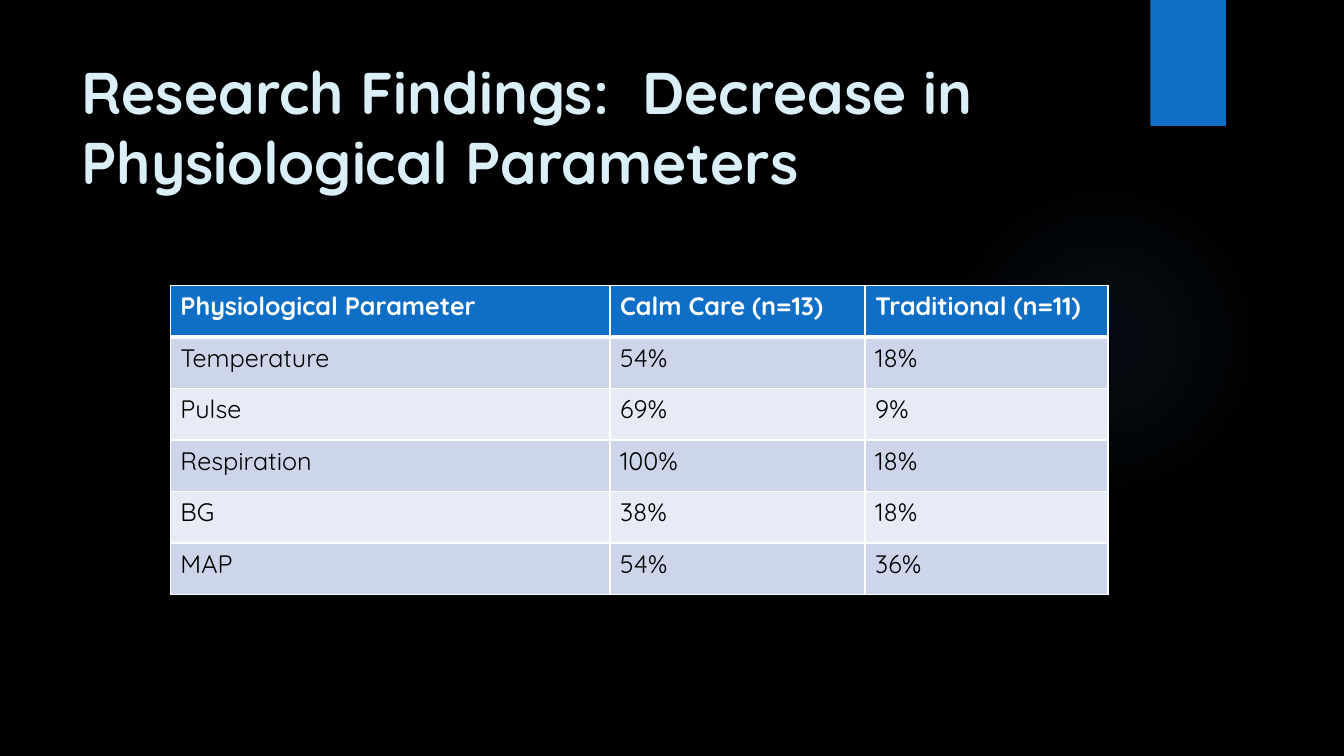
from lxml import etree
from pptx import Presentation
from pptx.dml.color import RGBColor
from pptx.enum.shapes import MSO_SHAPE as Shape
from pptx.enum.text import MSO_ANCHOR as Anchor
from pptx.oxml import parse_xml
from pptx.oxml.ns import nsdecls, qn
from pptx.util import Inches, Pt

FONT = "Quicksand"
BLACK = RGBColor(0x00, 0x00, 0x00)
WHITE = RGBColor(0xFF, 0xFF, 0xFF)
BLUE = RGBColor(0x0F, 0x6F, 0xC6)
GLOW = RGBColor(0x44, 0x8A, 0xD7)
PALE_BLUE = RGBColor(0xDB, 0xEF, 0xF9)
BANDS = (RGBColor(0xCC, 0xD5, 0xEA), RGBColor(0xE7, 0xEB, 0xF5))

GLOW_STOPS = ((0, 7), (36, 6), (69, 0), (100, 0))
COLUMN_WIDTHS = (4.36, 2.53, 2.41)
FINDINGS = (
    ("Physiological Parameter", "Calm Care (n=13)", "Traditional (n=11)"),
    ("Temperature", "54%", "18%"),
    ("Pulse", "69%", "9%"),
    ("Respiration", "100%", "18%"),
    ("BG", "38%", "18%"),
    ("MAP", "54%", "36%"),
)


def format_text(paragraph, size, color, bold):
    """Format every run of a paragraph."""
    for run in paragraph.runs:
        run.font.name = FONT
        run.font.size = Pt(size)
        run.font.bold = bold
        run.font.color.rgb = color


def add_plain_shape(slide, kind, left, top, width, height):
    """Add a blue shape without outline or shadow."""
    shape = slide.shapes.add_shape(
        kind, Inches(left), Inches(top), Inches(width), Inches(height))
    shape.shadow.inherit = False
    shape.fill.solid()
    shape.fill.fore_color.rgb = BLUE
    shape.line.fill.background()
    return shape


def add_glow(slide, left, top, size):
    """Add a round glow that fades outwards."""
    glow = add_plain_shape(slide, Shape.OVAL, left, top, size, size)
    stops = "".join(
        f'<a:gs pos="{position * 1000}"><a:srgbClr val="{GLOW}">'
        f'<a:alpha val="{alpha * 1000}"/></a:srgbClr></a:gs>'
        for position, alpha in GLOW_STOPS)
    gradient = parse_xml(
        f'<a:gradFill {nsdecls("a")} rotWithShape="1"><a:gsLst>{stops}</a:gsLst>'
        '<a:path path="circle"><a:fillToRect l="50000" t="50000" r="50000" '
        'b="50000"/></a:path></a:gradFill>')
    properties = glow.element.spPr
    properties.replace(properties.find(qn("a:solidFill")), gradient)


def add_title(slide, left, top, width, height):
    """Add the slide heading."""
    box = slide.shapes.add_textbox(
        Inches(left), Inches(top), Inches(width), Inches(height))
    frame = box.text_frame
    frame.word_wrap = True
    frame.vertical_anchor = Anchor.TOP
    frame.text = "Research Findings:  Decrease in Physiological Parameters"
    format_text(frame.paragraphs[0], 42, PALE_BLUE, True)


def add_borders(cell, top, bottom):
    """Give a cell white borders, with top and bottom widths in points."""
    properties = cell._tc.get_or_add_tcPr()
    edges = (("lnL", 1), ("lnR", 1), ("lnT", top), ("lnB", bottom))
    for index, (edge, width) in enumerate(edges):
        border = etree.Element(qn(f"a:{edge}"), w=str(Pt(width)))
        fill = etree.SubElement(border, qn("a:solidFill"))
        etree.SubElement(fill, qn("a:srgbClr"), val=str(WHITE))
        properties.insert(index, border)


def add_findings_table(slide, left, top, width, height):
    """Add the table of findings with a header and banded rows."""
    table = slide.shapes.add_table(
        len(FINDINGS), len(COLUMN_WIDTHS),
        Inches(left), Inches(top), Inches(width), Inches(height)).table
    for column, column_width in zip(table.columns, COLUMN_WIDTHS):
        column.width = Inches(column_width * width / sum(COLUMN_WIDTHS))
    for row, values in enumerate(FINDINGS):
        header = row == 0
        for column, value in enumerate(values):
            cell = table.cell(row, column)
            cell.text_frame.text = value
            format_text(cell.text_frame.paragraphs[0], 18,
                        WHITE if header else BLACK, header)
            cell.fill.solid()
            cell.fill.fore_color.rgb = BLUE if header else BANDS[(row - 1) % 2]
            add_borders(cell, 3 if row == 1 else 1, 3 if header else 1)


def main():
    """Build and save the slide."""
    deck = Presentation()
    deck.slide_width, deck.slide_height = Inches(13.33), Inches(7.5)
    slide = deck.slides.add_slide(deck.slide_layouts[6])
    slide.background.fill.solid()
    slide.background.fill.fore_color.rgb = BLACK
    add_glow(slide, 9.41, 1.83, 3.08)
    add_plain_shape(slide, Shape.RECTANGLE, 11.41, 0, 0.75, 1.25)
    add_title(slide, 0.71, 0.5, 10.29, 1.53)
    add_findings_table(slide, 1.69, 2.83, 9.3, 3.07)
    deck.save("out.pptx")


if __name__ == "__main__":
    main()
